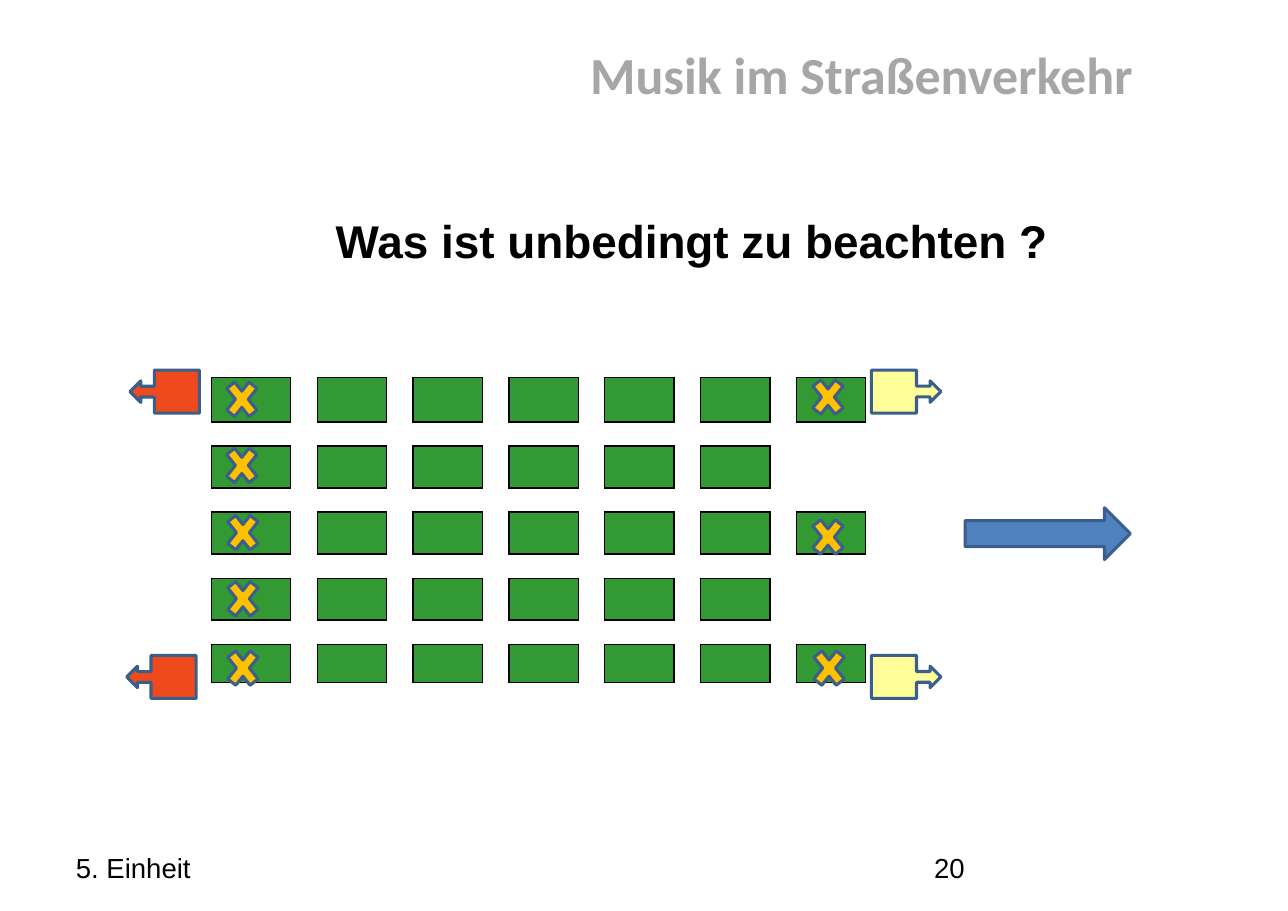
from lxml.etree import SubElement
from pptx import Presentation
from pptx.dml.color import RGBColor
from pptx.enum.shapes import MSO_SHAPE
from pptx.enum.text import PP_ALIGN
from pptx.oxml.ns import qn
from pptx.util import Inches, Pt

BLACK = RGBColor(0x00, 0x00, 0x00)
GREY = RGBColor(0xA6, 0xA6, 0xA6)
GREEN = RGBColor(0x33, 0x99, 0x33)
BLUE = RGBColor(0x4F, 0x81, 0xBD)
OUTLINE = RGBColor(0x3A, 0x5F, 0x8C)
YELLOW = RGBColor(0xFF, 0xFF, 0x99)
RED = RGBColor(0xEF, 0x4A, 0x1D)
AMBER = RGBColor(0xFF, 0xC0, 0x00)

TEXTS = [
    ("Musik im Straßenverkehr", (5.14, 0.43, 5.36, 0.71), "Calibri", 34, GREY, True, PP_ALIGN.CENTER, 0.83),
    ("Was ist unbedingt zu beachten ?", (1.99, 1.97, 8.58, 0.55), "Arial", 30, BLACK, True, PP_ALIGN.CENTER, 0.83),
    ("5. Einheit", (0.59, 7.7, 2.72, 0.43), "Arial", 18, BLACK, False, PP_ALIGN.LEFT, 0.93),
    ("20", (8.38, 7.7, 2.72, 0.43), "Arial", 18, BLACK, False, PP_ALIGN.LEFT, 0.93),
]

FORMATION_LEFT, FORMATION_TOP = 1.92, 3.43
COLUMN_WIDTHS = [0.72] + [0.24, 0.63] * 6
ROW_HEIGHTS = [0.4] + [0.22, 0.38] * 3 + [0.22, 0.35]
EMPTY_PLACES = {(2, 12), (6, 12)}

DIRECTION_ARROW = (8.76, 4.61)
LAMPS = [
    (7.91, 3.36, YELLOW, 0),
    (7.91, 5.95, YELLOW, 0),
    (1.18, 3.36, RED, 180),
    (1.15, 5.95, RED, 180),
]
CROSSES = [
    (7.33, 5.82), (7.32, 3.36), (2.01, 5.82), (2.01, 5.19),
    (2.01, 4.59), (2, 3.98), (2, 3.38), (7.32, 4.63),
]


def add_text(slide, text, box, font_name, size, color, bold, alignment, spacing):
    text_frame = slide.shapes.add_textbox(*map(Inches, box)).text_frame
    text_frame.word_wrap = True
    text_frame.text = text
    paragraph = text_frame.paragraphs[0]
    paragraph.alignment = alignment
    paragraph.line_spacing = spacing
    font = paragraph.runs[0].font
    font.name, font.size, font.bold = font_name, Pt(size), bold
    font.color.rgb = color


def add_figure(slide, kind, left, top, width, height, color, rotation=0):
    shape = slide.shapes.add_shape(kind, *map(Inches, (left, top, width, height)))
    shape.shadow.inherit = False
    shape.rotation = rotation
    shape.fill.solid()
    shape.fill.fore_color.rgb = color
    shape.line.color.rgb = OUTLINE
    shape.line.width = Pt(2)


def is_place(row, column):
    return (
        row in range(0, len(ROW_HEIGHTS), 2)
        and column in range(0, len(COLUMN_WIDTHS), 2)
        and (row, column) not in EMPTY_PLACES
    )


def set_borders(cell, row, column):
    properties = cell._tc.get_or_add_tcPr()
    neighbours = {
        "a:lnL": (row, column - 1),
        "a:lnR": (row, column + 1),
        "a:lnT": (row - 1, column),
        "a:lnB": (row + 1, column),
    }
    for tag, neighbour in neighbours.items():
        line = SubElement(properties, qn(tag), w=str(Pt(1)))
        if is_place(row, column) or is_place(*neighbour):
            fill = SubElement(line, qn("a:solidFill"))
            SubElement(fill, qn("a:srgbClr"), val=str(BLACK))
        else:
            SubElement(line, qn("a:noFill"))


def add_formation(slide):
    frame = slide.shapes.add_table(
        len(ROW_HEIGHTS), len(COLUMN_WIDTHS),
        Inches(FORMATION_LEFT), Inches(FORMATION_TOP),
        Inches(sum(COLUMN_WIDTHS)), Inches(sum(ROW_HEIGHTS)),
    )
    table = frame.table
    table.first_row = table.horz_banding = False
    for column, width in zip(table.columns, COLUMN_WIDTHS):
        column.width = Inches(width)
    for row_index, height in enumerate(ROW_HEIGHTS):
        table.rows[row_index].height = Inches(height)
        for column_index in range(len(COLUMN_WIDTHS)):
            cell = table.cell(row_index, column_index)
            cell.margin_left = cell.margin_right = 0
            cell.margin_top = cell.margin_bottom = 0
            paragraph = cell.text_frame.paragraphs[0]
            SubElement(paragraph._p, qn("a:endParaRPr"), sz="600")
            set_borders(cell, row_index, column_index)
            if is_place(row_index, column_index):
                cell.fill.solid()
                cell.fill.fore_color.rgb = GREEN
            else:
                cell.fill.background()


def main():
    presentation = Presentation()
    presentation.slide_width = Inches(11.69)
    presentation.slide_height = Inches(8.27)
    slide = presentation.slides.add_slide(presentation.slide_layouts[6])

    for text in TEXTS:
        add_text(slide, *text)
    add_formation(slide)
    add_figure(slide, MSO_SHAPE.RIGHT_ARROW, *DIRECTION_ARROW, 1.5, 0.47, BLUE)
    for left, top, color, rotation in LAMPS:
        add_figure(slide, MSO_SHAPE.RIGHT_ARROW_CALLOUT, left, top, 0.63, 0.39, color, rotation)
    for left, top in CROSSES:
        add_figure(slide, MSO_SHAPE.MATH_MULTIPLY, left, top, 0.39, 0.49, AMBER)

    presentation.save("out.pptx")


if __name__ == "__main__":
    main()
